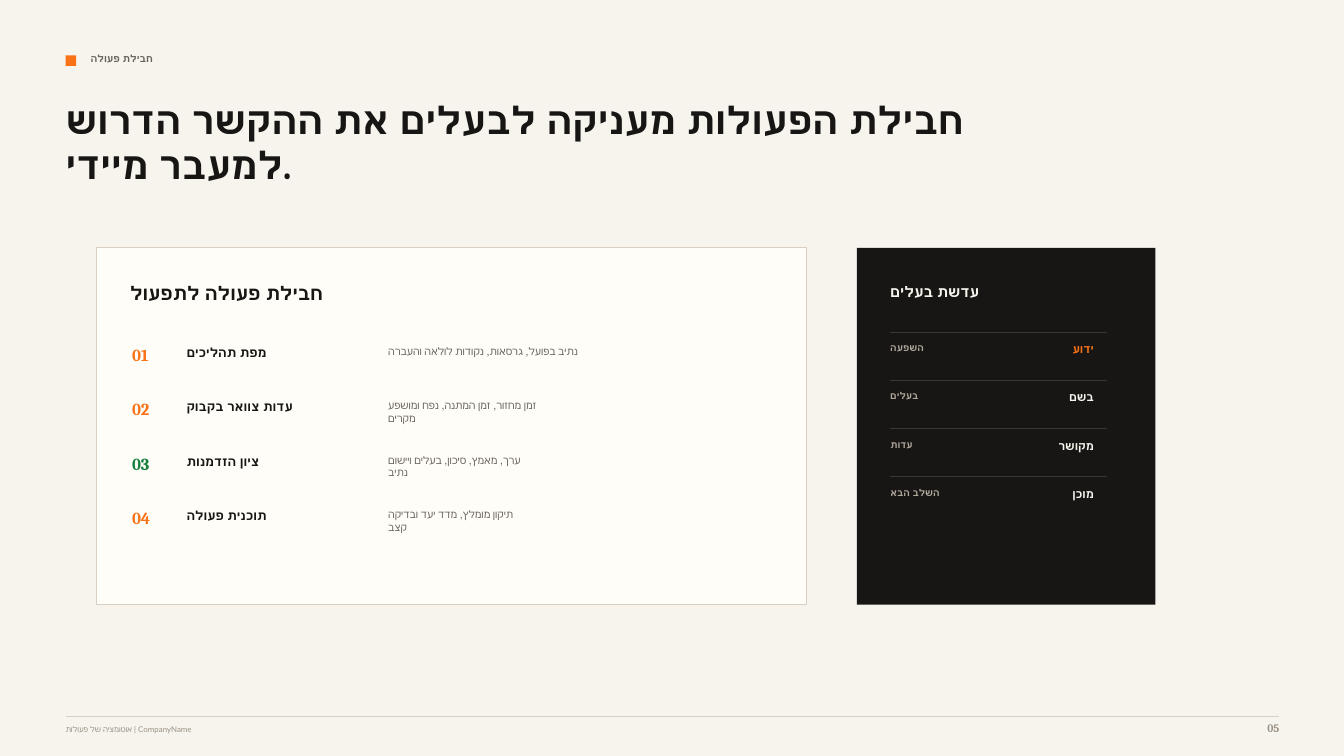
from dataclasses import dataclass

from lxml.etree import SubElement
from pptx import Presentation
from pptx.dml.color import RGBColor
from pptx.enum.shapes import MSO_CONNECTOR, MSO_SHAPE
from pptx.enum.text import MSO_ANCHOR, MSO_AUTO_SIZE, PP_ALIGN
from pptx.oxml.ns import qn
from pptx.util import Inches, Pt


@dataclass(frozen=True)
class Theme:
    serif: str = "Cambria"
    sans: str = "Lato"
    page: str = "F7F4EE"
    card: str = "FFFDF8"
    ink: str = "171614"
    soft: str = "69635A"
    pale: str = "9A9184"
    sand: str = "AFA79B"
    edge: str = "D9D0C3"
    dim: str = "3C362E"
    hot: str = "F97316"
    good: str = "15803D"
    title: float = 27
    head: float = 13.5
    index: float = 12
    side: float = 10.5
    item: float = 9
    value: float = 8.2
    note: float = 7.5
    tag: float = 7.1
    label: float = 6.8
    foot: float = 5.6


T = Theme()
WIDE, HIGH = Inches(13.33), Inches(7.5)
CELL = HIGH / 75  # square grid: 75 rows, 133.3 columns
LEFT, RIGHT = 6.5, 126.9

STEPS = [
    ("מפת תהליכים", ["נתיב בפועל, גרסאות, נקודות לולאה והעברה"], T.hot),
    ("עדות צוואר בקבוק", ["זמן מחזור, זמן המתנה, נפח ומושפע", "מקרים"], T.hot),
    ("ציון הזדמנות", ["ערך, מאמץ, סיכון, בעלים ויישום", "נתיב"], T.good),
    ("תוכנית פעולה", ["תיקון מומלץ, מדד יעד ובדיקה", "קצב"], T.hot),
]
FACTS = [
    ("השפעה", "ידוע", T.hot),
    ("בעלים", "בשם", T.page),
    ("עדות", "מקושר", T.page),
    ("השלב הבא", "מוכן", T.page),
]


def grid(*cells):
    return [round(n * CELL) for n in cells]


def tint(code):
    return RGBColor.from_string(code)


def write(shape, lines, size, color, face=T.sans, bold=True, align=PP_ALIGN.LEFT):
    frame = shape.text_frame
    frame.word_wrap = True
    frame.auto_size = MSO_AUTO_SIZE.NONE
    frame.vertical_anchor = MSO_ANCHOR.TOP
    frame.margin_left = frame.margin_right = 0
    frame.margin_top = frame.margin_bottom = 0
    for i, line in enumerate(lines):
        para = frame.add_paragraph() if i else frame.paragraphs[0]
        para.alignment = align
        para.line_spacing = 1.0
        run = para.add_run()
        run.text = line
        font = run.font
        font.name, font.size, font.bold = face, Pt(size), bold
        font.color.rgb = tint(color)


def label(slide, box, lines, *style, **more):
    write(slide.shapes.add_textbox(*grid(*box)), lines, *style, **more)


def panel(slide, box, fill, edge=None):
    shape = slide.shapes.add_shape(MSO_SHAPE.RECTANGLE, *grid(*box))
    shape.shadow.inherit = False
    shape.fill.solid()
    shape.fill.fore_color.rgb = tint(fill)
    if edge:
        shape.line.color.rgb = tint(edge)
        shape.line.width = Pt(0.75)
    else:
        shape.line.fill.background()


def rule(slide, left, right, top, color):
    line = slide.shapes.add_connector(
        MSO_CONNECTOR.STRAIGHT, *grid(left, top, right, top))
    line.line.color.rgb = tint(color)
    line.line.width = Pt(0.75)
    SubElement(line._element.spPr, qn("a:effectLst"))


def header(slide):
    panel(slide, (LEFT, 5.5, 1.05, 1.05), T.hot)
    label(slide, (9, 5.2, 64.6, 1.9), ["חבילת פעולה"], T.tag, T.soft)
    title = slide.shapes.title
    title.left, title.top, title.width, title.height = grid(LEFT, 9.6, 93.8, 10.2)
    write(title, ["חבילת הפעולות מעניקה לבעלים את ההקשר הדרוש למעבר מיידי."],
          T.title, T.ink, T.serif)


def pack(slide):
    panel(slide, (9.6, 24.6, 70.4, 35.4), T.card, T.edge)
    label(slide, (12.9, 27.9, 31.2, 2.5), ["חבילת פעולה לתפעול"], T.head, T.ink)
    for i, (name, notes, color) in enumerate(STEPS):
        top = 34.2 + 5.4 * i
        label(slide, (13.1, top, 3.5, 2.5), [f"{i + 1:02}"], T.index, color, T.serif)
        label(slide, (18.5, top, 18.1, 1.9), [name], T.item, T.ink)
        label(slide, (38.5, top, 33.3, 3.1), notes, T.note, T.soft, bold=False)


def lens(slide):
    panel(slide, (85, 24.6, 29.6, 35.4), T.ink)
    label(slide, (88.3, 28.1, 16.7, 2.1), ["עדשת בעלים"], T.side, T.page)
    for i, (name, value, color) in enumerate(FACTS):
        top = 32.95 + 4.79 * i
        rule(slide, 88.3, 109.8, top, T.dim)
        label(slide, (88.3, top + 1, 9.6, 1.7), [name], T.label, T.sand)
        label(slide, (100, top + 1, 8.5, 1.7), [value], T.value, color,
              align=PP_ALIGN.RIGHT)


def footer(slide):
    rule(slide, LEFT, RIGHT, 71.05, T.edge)
    label(slide, (LEFT, 71.9, 79.2, 1.5), ["אוטומציה של פעולות | CompanyName"],
          T.foot, T.pale, bold=False)
    label(slide, (RIGHT - 5, 71.5, 5, 1.9), ["05"], T.value, T.pale, T.serif,
          align=PP_ALIGN.RIGHT)


def main():
    deck = Presentation()
    deck.slide_width, deck.slide_height = WIDE, HIGH
    slide = deck.slides.add_slide(deck.slide_layouts[5])
    slide.background.fill.solid()
    slide.background.fill.fore_color.rgb = tint(T.page)
    for part in (header, pack, lens, footer):
        part(slide)
    deck.save("out.pptx")


if __name__ == "__main__":
    main()
